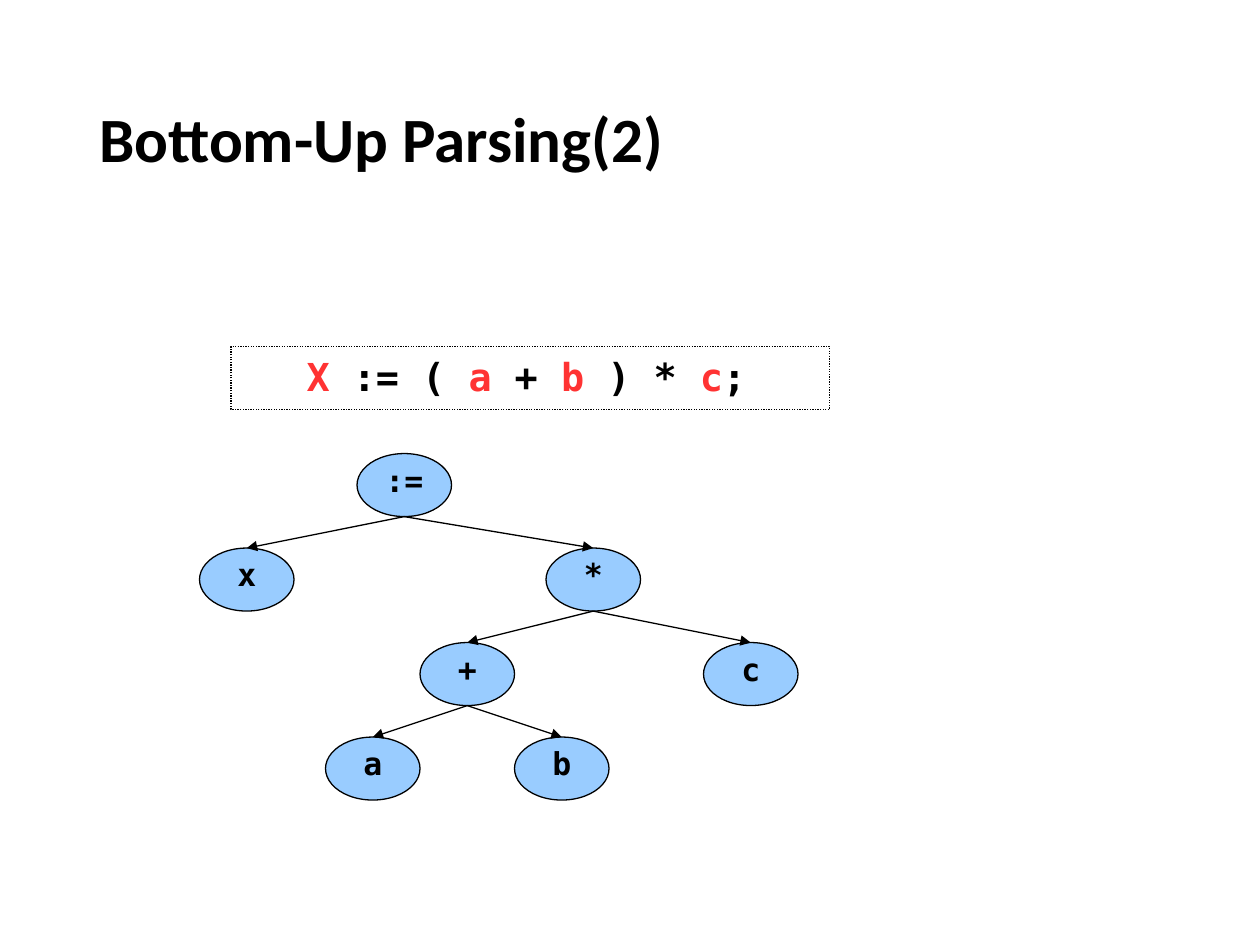
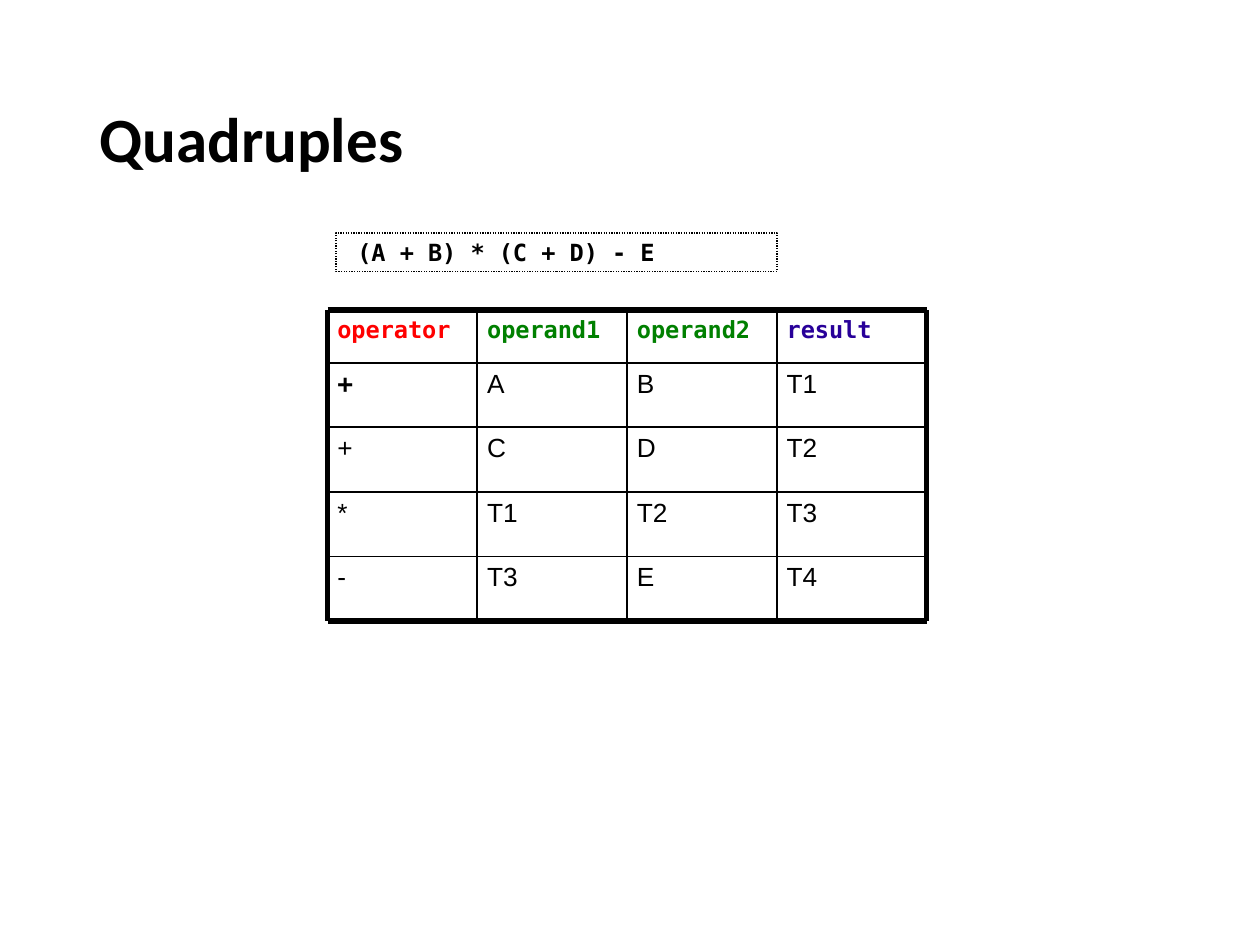
from dataclasses import dataclass

from lxml import etree
from pptx import Presentation
from pptx.dml.color import RGBColor
from pptx.enum.dml import MSO_LINE
from pptx.enum.shapes import MSO_CONNECTOR, MSO_SHAPE
from pptx.enum.text import MSO_ANCHOR, MSO_AUTO_SIZE, PP_ALIGN
from pptx.oxml.ns import qn
from pptx.util import Pt

STRAIGHT = MSO_CONNECTOR.STRAIGHT
OVAL, RECTANGLE = MSO_SHAPE.OVAL, MSO_SHAPE.RECTANGLE
DOTTED = MSO_LINE.ROUND_DOT
TOP, MIDDLE = MSO_ANCHOR.TOP, MSO_ANCHOR.MIDDLE
LEFT, CENTER = PP_ALIGN.LEFT, PP_ALIGN.CENTER
NO_AUTOSIZE = MSO_AUTO_SIZE.NONE
PLAIN_TABLE_STYLE = "{2D5ABB26-0587-4C30-8999-92F81FD0307C}"

COLORS = {
    "black": "000000",
    "white": "FFFFFF",
    "node": "99CCFF",
    "variable": "FF3333",
    "operator": "FF0000",
    "operand": "008000",
    "result": "280099",
}
TITLE_FONT, CODE_FONT, CELL_FONT = "Calibri", "DejaVu Sans Mono", "Arial"

NODE_WIDTH, NODE_HEIGHT = 54, 36
TREE_TOP, LEVEL_STEP = 259.2, 54
WIDE_INSETS, NARROW_INSETS, CELL_INSETS = (7.2, 3.6), (5.04, 2.88), (5.6, 3.8)

TABLE_LEFT, TABLE_TOP = 187.2, 177.1
COLUMN_WIDTH, HEADER_HEIGHT, ROW_HEIGHT = 85.6, 30.2, 36.9


@dataclass(frozen=True)
class Node:
    label: str
    center: float
    level: int
    parent: int | None = None  # index in TREE


TREE = [
    Node(":=", 231, 0),
    Node("x", 141, 1, 0),
    Node("*", 339, 1, 0),
    Node("+", 267, 2, 2),
    Node("a", 213, 3, 3),
    Node("b", 321, 3, 3),
    Node("c", 429, 2, 2),
]

ASSIGNMENT = [
    ("X", "variable"), (" := ( ", "black"), ("a", "variable"), (" + ", "black"),
    ("b", "variable"), (" ) * ", "black"), ("c", "variable"), (";", "black"),
]

HEADERS = [("operator", "operator"), ("operand1", "operand"),
           ("operand2", "operand"), ("result", "result")]
QUADRUPLES = [
    ("+", "A", "B", "T1"),
    ("+", "C", "D", "T2"),
    ("*", "T1", "T2", "T3"),
    ("-", "T3", "E", "T4"),
]


def rgb(name: str) -> RGBColor:
    return RGBColor.from_string(COLORS[name])


def write_text(frame, text, *, size, font=CODE_FONT, bold=True, color="black",
               align=LEFT, spacing=1.0, before=0, after=0) -> None:
    """Fill a text frame with one paragraph: a string or (text, color) pairs."""
    paragraph = frame.paragraphs[0]
    paragraph.alignment = align
    paragraph.line_spacing = spacing
    paragraph.space_before, paragraph.space_after = Pt(before), Pt(after)
    for part, part_color in [(text, color)] if isinstance(text, str) else text:
        run = paragraph.add_run()
        run.text = part
        run.font.name, run.font.size, run.font.bold = font, Pt(size), bold
        run.font.color.rgb = rgb(part_color)


def set_margins(target, insets: tuple[float, float], indent: float = 0) -> None:
    side, end = insets
    target.margin_left, target.margin_right = Pt(side + indent), Pt(side)
    target.margin_top = target.margin_bottom = Pt(end)


def add_titled_slide(presentation, title: str):
    slide = presentation.slides.add_slide(presentation.slide_layouts[5])
    shape = slide.shapes.title
    shape.left, shape.top, shape.width, shape.height = Pt(49.5), Pt(28.8), Pt(621), Pt(104.4)
    frame = shape.text_frame
    frame.auto_size, frame.vertical_anchor = NO_AUTOSIZE, MIDDLE
    set_margins(frame, WIDE_INSETS)
    write_text(frame, title, size=36, font=TITLE_FONT, spacing=0.9)
    return slide


def add_outlined_shape(slide, kind, left: float, top: float, width: float, height: float,
                       *, fill: str, insets=WIDE_INSETS, indent: float = 0, anchor=TOP):
    shape = slide.shapes.add_shape(kind, Pt(left), Pt(top), Pt(width), Pt(height))
    shape.shadow.inherit = False
    shape.fill.solid()
    shape.fill.fore_color.rgb = rgb(fill)
    shape.line.color.rgb = rgb("black")
    shape.line.width = Pt(0.75)
    shape.text_frame.word_wrap = True
    shape.text_frame.vertical_anchor = anchor
    set_margins(shape.text_frame, insets, indent)
    return shape


def add_formula(slide, text, left: float, top: float, width: float, height: float,
                *, size: float, indent: float, insets=WIDE_INSETS, gap: float = 0) -> None:
    box = add_outlined_shape(slide, RECTANGLE, left, top, width, height,
                             fill="white", insets=insets, indent=indent)
    box.line.dash_style = DOTTED
    write_text(box.text_frame, text, size=size, before=gap, after=gap)


def add_line(slide, start: tuple[int, int], end: tuple[int, int], width: float):
    connector = slide.shapes.add_connector(STRAIGHT, *start, *end)
    connector.line.color.rgb = rgb("black")
    connector.line.width = Pt(width)
    etree.SubElement(connector._element.spPr, qn("a:effectLst"))
    return connector


def add_node(slide, node: Node):
    shape = add_outlined_shape(slide, OVAL, node.center - NODE_WIDTH / 2,
                               TREE_TOP + node.level * LEVEL_STEP,
                               NODE_WIDTH, NODE_HEIGHT, fill="node", anchor=MIDDLE)
    shape.text_frame.word_wrap = False
    write_text(shape.text_frame, node.label, size=18, align=CENTER, spacing=0.66)
    return shape


def add_branch(slide, parent, child) -> None:
    """Draw an arrow from the bottom of the parent to the top of the child."""
    start = (parent.left + parent.width // 2, parent.top + parent.height)
    connector = add_line(slide, start, (child.left + child.width // 2, child.top), 0.75)
    connector.end_connect(child, 0)
    etree.SubElement(connector.line._get_or_add_ln(), qn("a:tailEnd"), type="triangle")


def add_quadruple_table(slide) -> None:
    table = slide.shapes.add_table(
        len(QUADRUPLES) + 1, len(HEADERS), Pt(TABLE_LEFT), Pt(TABLE_TOP),
        Pt(len(HEADERS) * COLUMN_WIDTH),
        Pt(HEADER_HEIGHT + len(QUADRUPLES) * ROW_HEIGHT)).table
    table.first_row = table.horz_banding = False
    table._tbl.tblPr.find(qn("a:tableStyleId")).text = PLAIN_TABLE_STYLE
    for column in table.columns:
        column.width = Pt(COLUMN_WIDTH)
    for index, row in enumerate(table.rows):
        row.height = Pt(ROW_HEIGHT if index else HEADER_HEIGHT)
        for position, cell in enumerate(row.cells):
            cell.fill.background()
            set_margins(cell, CELL_INSETS)
            if index == 0:
                text, color = HEADERS[position]
                write_text(cell.text_frame, text, size=13.5, color=color, before=3.4)
            else:
                is_code = (index, position) == (1, 0)
                write_text(cell.text_frame, QUADRUPLES[index - 1][position], size=15,
                           font=CODE_FONT if is_code else CELL_FONT,
                           bold=is_code, before=3.8)


def add_table_rules(slide) -> None:
    """Draw thin rules between the cells, then a thick frame around them."""
    across = [Pt(TABLE_LEFT + index * COLUMN_WIDTH) for index in range(len(HEADERS) + 1)]
    down = [Pt(TABLE_TOP)] + [Pt(TABLE_TOP + HEADER_HEIGHT + index * ROW_HEIGHT)
                              for index in range(len(QUADRUPLES) + 1)]
    for width, columns, rows in [(1, across[1:-1], down[1:-1]),
                                 (3, across[::len(across) - 1], down[::len(down) - 1])]:
        for y in rows:
            add_line(slide, (across[0], y), (across[-1], y), width)
        for x in columns:
            add_line(slide, (x, down[0]), (x, down[-1]), width)


def build_parsing_slide(presentation) -> None:
    slide = add_titled_slide(presentation, "Bottom-Up Parsing(2)")
    # Syntax tree
    shapes = [add_node(slide, node) for node in TREE]
    for node, shape in zip(TREE, shapes):
        if node.parent is not None:
            add_branch(slide, shapes[node.parent], shape)
    # Parsed statement
    add_formula(slide, ASSIGNMENT, 132, 198, 342, 36, size=22, indent=36)


def build_quadruples_slide(presentation) -> None:
    slide = add_titled_slide(presentation, "Quadruples")
    # Table of quadruples
    add_quadruple_table(slide)
    add_table_rules(slide)
    # Translated expression
    add_formula(slide, "(A + B) * (C + D) - E", 192, 133.2, 252, 21.8,
                size=13.5, indent=7.2, insets=NARROW_INSETS, gap=3.8)


def main() -> None:
    presentation = Presentation()
    presentation.slide_width, presentation.slide_height = Pt(720), Pt(540)
    build_parsing_slide(presentation)
    build_quadruples_slide(presentation)
    presentation.save("out.pptx")


if __name__ == "__main__":
    main()
